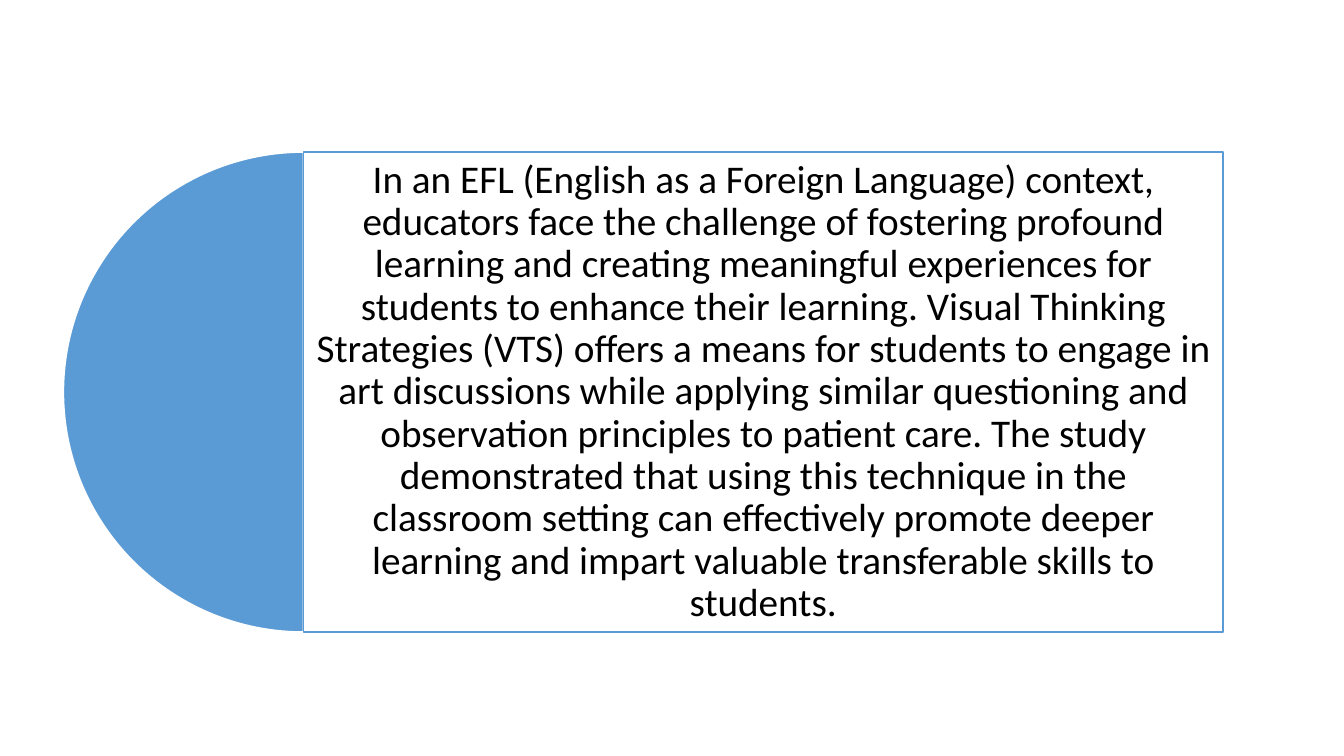
from lxml.etree import SubElement
from pptx import Presentation
from pptx.dml.color import RGBColor
from pptx.enum.shapes import MSO_SHAPE
from pptx.enum.text import MSO_ANCHOR, PP_ALIGN
from pptx.oxml.ns import qn
from pptx.util import Inches, Pt

COLORS = {"white": "FFFFFF", "blue": "5B9BD5", "black": "000000"}
LEFT, TOP, WIDTH = 0.63, 1.51, 11.5
DIAMETER = 4.76
CONCLUSION = (
    "In an EFL (English as a Foreign Language) context, educators face the "
    "challenge of fostering profound learning and creating meaningful "
    "experiences for students to enhance their learning. Visual Thinking "
    "Strategies (VTS) offers a means for students to engage in art discussions "
    "while applying similar questioning and observation principles to patient "
    "care. The study demonstrated that using this technique in the classroom "
    "setting can effectively promote deeper learning and impart valuable "
    "transferable skills to students."
)
TEXT_FORMAT = {"name": "Calibri", "size": Pt(28)}


def rgb(name):
    return RGBColor.from_string(COLORS[name])


def set_text(sp, text):
    tf = sp.text_frame
    tf.word_wrap = True
    tf.vertical_anchor = MSO_ANCHOR.MIDDLE
    for side in ("left", "top", "right", "bottom"):
        setattr(tf, f"margin_{side}", Inches(0.12))
    p = tf.paragraphs[0]
    p.alignment = PP_ALIGN.CENTER
    p.line_spacing = 0.9
    r = p.add_run()
    r.text = text
    r.font.color.rgb = rgb("black")
    for name, value in TEXT_FORMAT.items():
        setattr(r.font, name, value)


def add_shape(s, kind, left, width, fill, line):
    sp = s.shapes.add_shape(
        kind, Inches(left), Inches(TOP), Inches(width), Inches(DIAMETER)
    )
    sp.shadow.inherit = False
    sp.fill.solid()
    sp.fill.fore_color.rgb = rgb(fill)
    sp.line.color.rgb = rgb(line)
    sp.line.width = Pt(1)
    return sp


def add_half_disc(s):
    sp = add_shape(s, MSO_SHAPE.PIE, LEFT, DIAMETER, "blue", "white")
    # Angles in units of 100000/60000 degree: 90 to 270 degrees
    sp.adjustments[0] = 54
    sp.adjustments[1] = 162


def add_panel(s, text):
    """Add the slightly transparent text panel, starting at the disc's centre."""
    offset = DIAMETER / 2
    sp = add_shape(
        s, MSO_SHAPE.RECTANGLE, LEFT + offset, WIDTH - offset, "white", "blue"
    )
    color = sp.element.spPr.find(qn("a:solidFill"))[0]
    SubElement(color, qn("a:alpha"), val="90000")
    set_text(sp, text)


def main():
    prs = Presentation()
    prs.slide_width, prs.slide_height = Inches(13.33), Inches(7.5)
    s = prs.slides.add_slide(prs.slide_layouts[6])
    add_half_disc(s)
    add_panel(s, CONCLUSION)
    prs.save("out.pptx")


if __name__ == "__main__":
    main()
